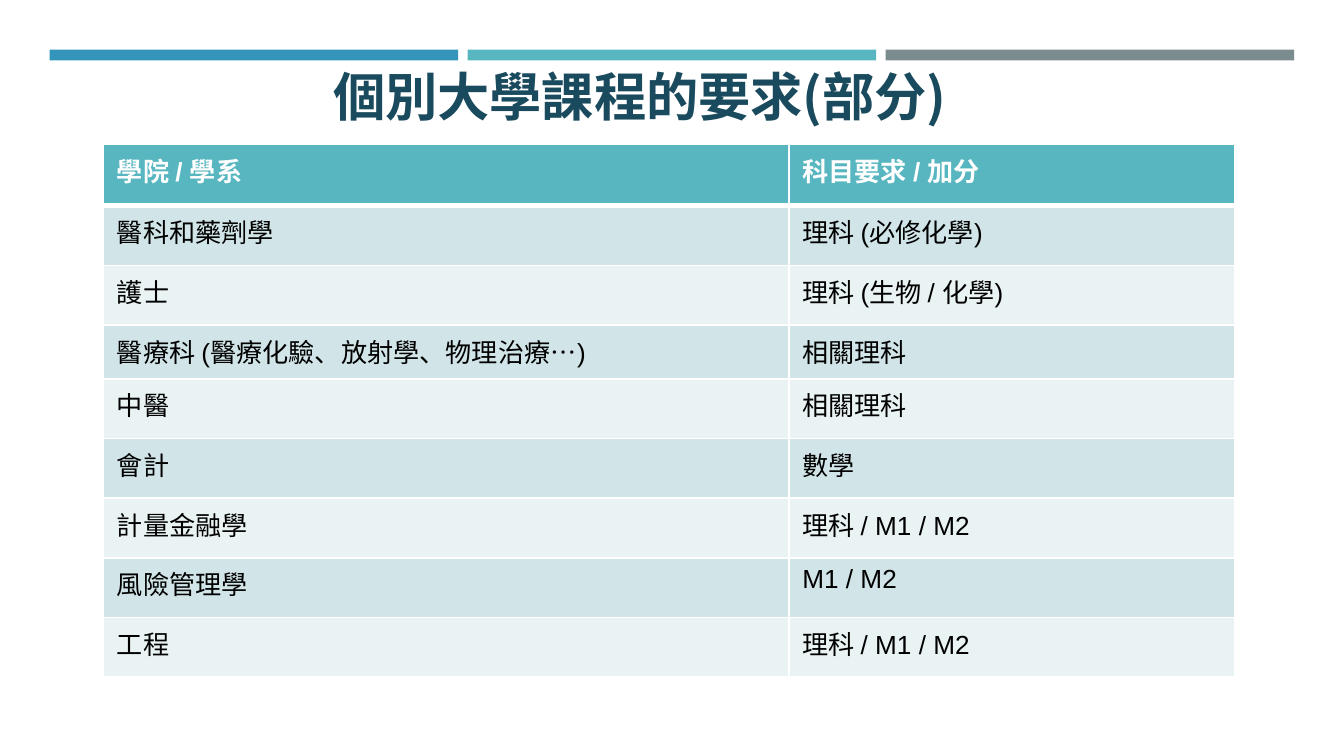
"""Build a slide listing the subject requirements of university programmes."""
from dataclasses import dataclass

from lxml import etree
from pptx import Presentation
from pptx import util as u
from pptx.dml.color import RGBColor
from pptx.enum import shapes, text
from pptx.oxml import ns


@dataclass(frozen=True)
class Theme:
    """Colours, fonts and type sizes of the slide."""
    blue: str = "3494BA"
    teal: str = "58B6C0"
    grey: str = "7A8C8E"
    navy: str = "1A4A5D"
    white: str = "FFFFFF"
    black: str = "000000"
    bands: tuple = ("D1E5E8", "EAF3F4")
    latin: str = "Arial"
    asian: str = "Noto Sans CJK SC"
    title_size: int = 28
    body_size: int = 14
    thin: int = 1
    thick: int = 3


@dataclass(frozen=True)
class Box:
    """A rectangle in inches."""
    left: float
    top: float
    width: float
    height: float

    def lengths(self) -> tuple:
        """Give the four lengths in slide units."""
        return tuple(u.Inches(n) for n in (self.left, self.top, self.width, self.height))


@dataclass(frozen=True)
class Requirement:
    """One programme and the subjects it asks for."""
    programme: str
    subjects: str


THEME = Theme()
SLIDE_WIDTH = 10
SLIDE_HEIGHT = SLIDE_WIDTH * 9 / 16
MARGIN, BAR_TOP, BAR_HEIGHT, BAR_GAP = 0.37, 0.37, 0.08, 0.07
TITLE = Box(2.38, 0.43, 5.62, 0.57)
TABLE = Box(0.77, 1.07, 8.42, 3.97)
COLUMN_WIDTHS = (5.1, 3.32)
SPECIAL_HEIGHTS = {0: 0.46, 3: 0.4}
REQUIREMENTS = (
    Requirement("學院 / 學系", "科目要求 / 加分"),
    Requirement("醫科和藥劑學", "理科 (必修化學)"),
    Requirement("護士", "理科 (生物 / 化學)"),
    Requirement("醫療科 (醫療化驗、放射學、物理治療…)", "相關理科"),
    Requirement("中醫", "相關理科"),
    Requirement("會計", "數學"),
    Requirement("計量金融學", "理科 / M1 / M2"),
    Requirement("風險管理學", "M1 / M2"),
    Requirement("工程", "理科 / M1 / M2"),
)
ROW_HEIGHT = ((TABLE.height - sum(SPECIAL_HEIGHTS.values()))
              / (len(REQUIREMENTS) - len(SPECIAL_HEIGHTS)))


def add_run(paragraph, words: str, size: int, color: str, bold: bool, latin: str) -> None:
    """Add one styled run to a paragraph."""
    run = paragraph.add_run()
    run.text = words
    run.font.size = u.Pt(size)
    run.font.bold = bold
    run.font.name = latin
    run.font.color.rgb = RGBColor.from_string(color)
    east_asian = etree.SubElement(run.font._element, ns.qn("a:ea"))
    east_asian.set("typeface", THEME.asian)


def add_bars(slide) -> None:
    """Draw the equal colour bars across the top."""
    colors = (THEME.blue, THEME.teal, THEME.grey)
    pitch = (SLIDE_WIDTH - 2 * MARGIN + BAR_GAP) / len(colors)
    for index, color in enumerate(colors):
        box = Box(MARGIN + index * pitch, BAR_TOP, pitch - BAR_GAP, BAR_HEIGHT)
        shape = slide.shapes.add_shape(shapes.MSO_SHAPE.RECTANGLE, *box.lengths())
        shape.shadow.inherit = False
        shape.fill.solid()
        shape.fill.fore_color.rgb = RGBColor.from_string(color)
        shape.line.fill.background()


def add_title(slide) -> None:
    """Write the slide title."""
    frame = slide.shapes.add_textbox(*TITLE.lengths()).text_frame
    frame.word_wrap = True
    frame.auto_size = text.MSO_AUTO_SIZE.SHAPE_TO_FIT_TEXT
    add_run(frame.paragraphs[0], "個別大學課程的要求(部分)",
            THEME.title_size, THEME.navy, True, THEME.asian)


def set_borders(cell, row: int) -> None:
    """Give a cell white borders, heavier below the header."""
    top = THEME.thick if row == 1 else THEME.thin
    bottom = THEME.thick if row == 0 else THEME.thin
    sides = {"lnL": THEME.thin, "lnR": THEME.thin, "lnT": top, "lnB": bottom}
    properties = cell._tc.get_or_add_tcPr()
    for position, (side, width) in enumerate(sides.items()):
        line = etree.Element(ns.qn(f"a:{side}"), w=str(u.Pt(width)))
        fill = etree.SubElement(line, ns.qn("a:solidFill"))
        etree.SubElement(fill, ns.qn("a:srgbClr"), val=THEME.white)
        properties.insert(position, line)


def fill_cell(cell, words: str, row: int) -> None:
    """Colour a cell by its row and write its words."""
    header = row == 0
    background = THEME.teal if header else THEME.bands[(row - 1) % 2]
    cell.fill.solid()
    cell.fill.fore_color.rgb = RGBColor.from_string(background)
    set_borders(cell, row)
    add_run(cell.text_frame.paragraphs[0], words, THEME.body_size,
            THEME.white if header else THEME.black, header, THEME.latin)


def add_requirements(slide) -> None:
    """Draw the table of requirements."""
    table = slide.shapes.add_table(
        len(REQUIREMENTS), len(COLUMN_WIDTHS), *TABLE.lengths()).table
    for column, width in zip(table.columns, COLUMN_WIDTHS):
        column.width = u.Inches(width)
    for row, requirement in enumerate(REQUIREMENTS):
        table.rows[row].height = u.Inches(SPECIAL_HEIGHTS.get(row, ROW_HEIGHT))
        fill_cell(table.cell(row, 0), requirement.programme, row)
        fill_cell(table.cell(row, 1), requirement.subjects, row)


def main() -> None:
    """Build and save the presentation."""
    presentation = Presentation()
    presentation.slide_width = u.Inches(SLIDE_WIDTH)
    presentation.slide_height = u.Inches(SLIDE_HEIGHT)
    slide = presentation.slides.add_slide(presentation.slide_layouts[6])
    add_bars(slide)
    add_title(slide)
    add_requirements(slide)
    presentation.save("out.pptx")


if __name__ == "__main__":
    main()
